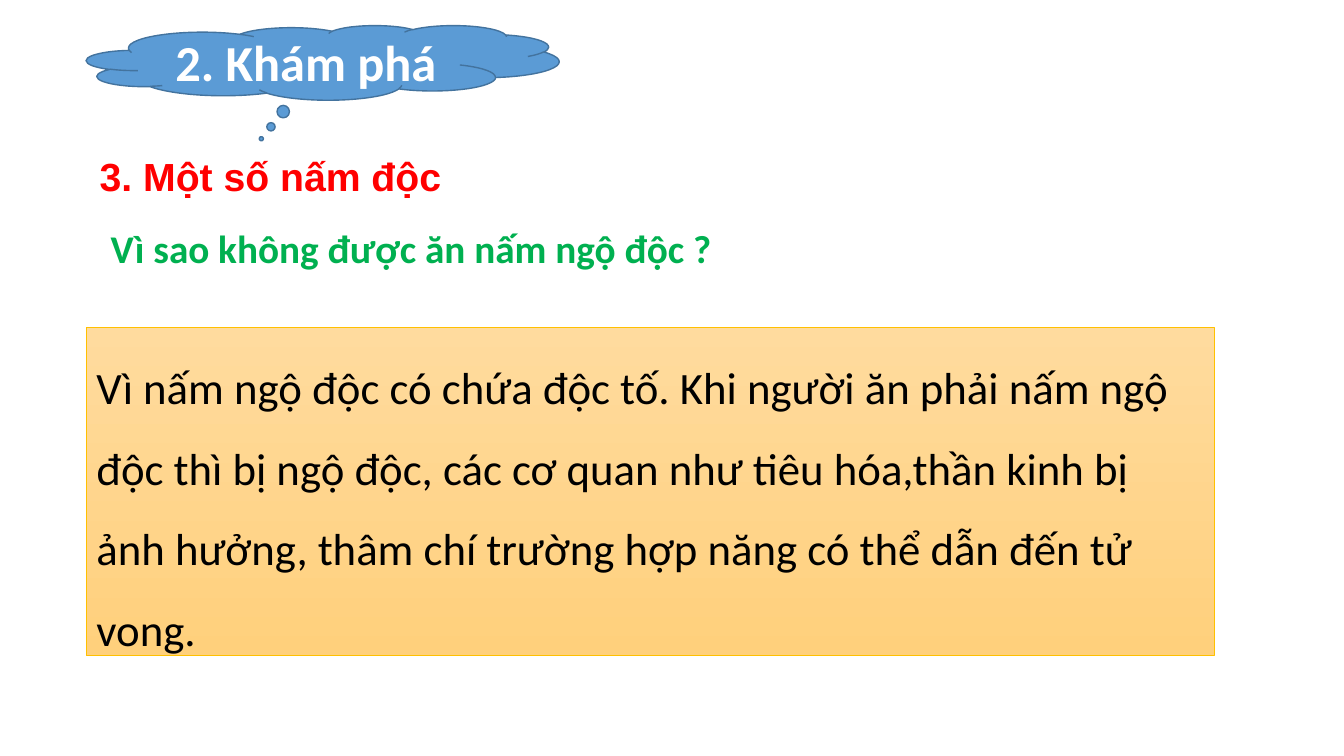
import pptx
import pptx.util
import pptx.dml.color
import pptx.enum.shapes
import pptx.enum.text

Cm, Pt = pptx.util.Cm, pptx.util.Pt
Kind = pptx.enum.shapes.MSO_SHAPE
Align = pptx.enum.text.PP_ALIGN
Anchor = pptx.enum.text.MSO_ANCHOR
Fit = pptx.enum.text.MSO_AUTO_SIZE

HUES = {
    "red": "FF0000", "green": "00B050", "black": "000000", "white": "FFFFFF",
    "blue": "5B9BD5", "navy": "43739E", "gold": "FFC000",
    "light": "FFDB9E", "dark": "FFD07C",
}


def hue(name):
    return pptx.dml.color.RGBColor.from_string(HUES[name])


def write(shape, text, color, frame, para, font):
    """Put one paragraph in the shape and apply the three format dicts."""
    body = shape.text_frame
    line = body.paragraphs[0]
    run = line.add_run()
    run.text = text
    run.font.color.rgb = hue(color)
    for part, form in ((body, frame), (line, para), (run.font, font)):
        for key, value in form.items():
            setattr(part, key, value)


deck = pptx.Presentation()
deck.slide_width, deck.slide_height = Cm(33.87), Cm(19.05)
slide = deck.slides.add_slide(deck.slide_layouts[6])
shapes = slide.shapes
left = Cm(2.18)

title = shapes.add_textbox(left, Cm(4.27), Cm(9.4), Cm(0.97))
write(title, "3. Một số nấm độc", "red",
      {"word_wrap": False, "auto_size": Fit.SHAPE_TO_FIT_TEXT},
      {"alignment": Align.JUSTIFY, "line_spacing": Pt(18), "space_after": Pt(12)},
      {"name": "Arial", "size": Pt(28), "bold": True})
title.text_frame.margin_left += Cm(0.08)

ask = shapes.add_textbox(Cm(2.54), Cm(5.54), Cm(25.6), Cm(1.45))
write(ask, "Vì sao không được ăn nấm ngộ độc ?", "green",
      {"word_wrap": True, "auto_size": Fit.SHAPE_TO_FIT_TEXT}, {},
      {"name": "Calibri", "size": Pt(28), "bold": True})

reply = shapes.add_shape(Kind.RECTANGLE, left, Cm(8.26), Cm(28.42), Cm(8.26))
reply.fill.gradient()
reply.fill.gradient_angle = 270
for stop, name, spot in zip(reply.fill.gradient_stops, ("light", "dark"), (0, 1)):
    stop.color.rgb = hue(name)
    stop.position = spot
write(reply,
      "Vì nấm ngộ độc có chứa độc tố. Khi người ăn phải nấm ngộ độc thì bị "
      "ngộ độc, các cơ quan như tiêu hóa,thần kinh bị ảnh hưởng, thâm chí "
      "trường hợp năng có thể dẫn đến tử vong.", "black",
      {"word_wrap": True, "auto_size": Fit.SHAPE_TO_FIT_TEXT,
       "vertical_anchor": Anchor.TOP},
      {"alignment": Align.LEFT, "line_spacing": 1.5},
      {"name": "Calibri", "size": Pt(32)})

cloud = shapes.add_shape(Kind.CLOUD_CALLOUT, left, Cm(0.64), Cm(11.91), Cm(1.88))
cloud.adjustments[0], cloud.adjustments[1] = -0.13, 1.02
cloud.fill.solid()
cloud.fill.fore_color.rgb = hue("blue")
write(cloud, "2. Khám phá", "white",
      {"word_wrap": True, "vertical_anchor": Anchor.MIDDLE},
      {"alignment": Align.CENTER},
      {"name": "Calibri", "size": Pt(36), "bold": True})

for shape, name, width in ((reply, "gold", 0.5), (cloud, "navy", 1)):
    shape.shadow.inherit = False
    shape.line.color.rgb = hue(name)
    shape.line.width = Pt(width)

deck.save("out.pptx")
